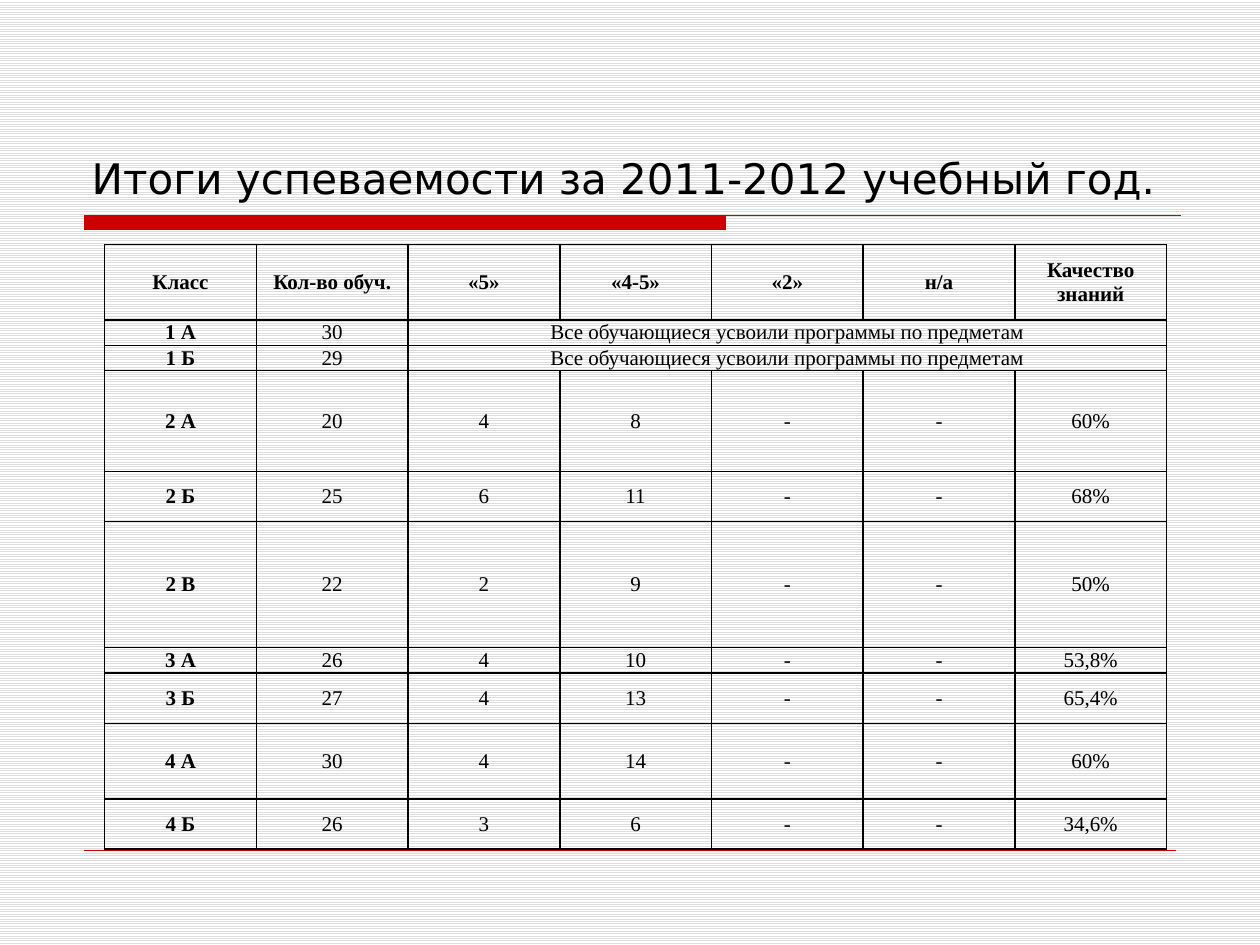
"""Build a slide with a table of school results for the 2011-2012 year."""
from copy import deepcopy

from lxml import etree
from pptx import Presentation
from pptx import util as u
from pptx.dml.color import RGBColor
from pptx.enum import dml, shapes, text
from pptx.oxml.ns import qn

HEADING = "Итоги успеваемости за 2011-2012 учебный год."
COLUMNS = ["Класс", "Кол-во обуч.", "«5»", "«4-5»", "«2»", "н/а", "Качество знаний"]
PASSED = "Все обучающиеся усвоили программы по предметам"
CLASSES = [
    (1, ["1 А", "30", PASSED]),
    (1, ["1 Б", "29", PASSED]),
    (4, ["2 А", "20", "4", "8", "-", "-", "60%"]),
    (2, ["2 Б", "25", "6", "11", "-", "-", "68%"]),
    (5, ["2 В", "22", "2", "9", "-", "-", "50%"]),
    (1, ["3 А", "26", "4", "10", "-", "-", "53,8%"]),
    (2, ["3 Б", "27", "4", "13", "-", "-", "65,4%"]),
    (3, ["4 А", "30", "4", "14", "-", "-", "60%"]),
    (2, ["4 Б", "26", "3", "6", "-", "-", "34,6%"]),
]
RESULTS = [(3, COLUMNS)] + CLASSES

THEME = {
    "ink": RGBColor(0, 0, 0),
    "accent": RGBColor(0xCC, 0, 0),
    "stripe": RGBColor(0xDD, 0xDD, 0xDD),
    "paper": RGBColor(0xFF, 0xFF, 0xFF),
    "heading": ("DejaVu Sans", u.Pt(24)),
    "body": ("Times New Roman", u.Pt(12)),
    "border": u.Pt(1),
    "rule": u.Pt(0.75),
    "footer": u.Pt(0.25),
}
LEFT, RULE_TOP, RULE_WIDTH = u.Cm(1.7), u.Cm(4.34), u.Cm(22.1)
BAR_WIDTH, BAR_HEIGHT = u.Cm(12.93), u.Cm(0.3)
TABLE_BOX = u.Cm(2.11), u.Cm(4.93), u.Cm(21.41), u.Cm(12.19)


def style(paragraph, role, bold=False):
    font = paragraph.font
    font.name, font.size = THEME[role]
    font.bold = bold
    font.color.rgb = THEME["ink"]


def paint_background(slide):
    fill = slide.background.fill
    fill.patterned()
    fill.pattern = dml.MSO_PATTERN.LIGHT_HORIZONTAL
    fill.fore_color.rgb = THEME["stripe"]
    fill.back_color.rgb = THEME["paper"]


def add_heading(slide):
    heading = slide.shapes.add_textbox(u.Cm(1.6), u.Cm(0.84), u.Cm(22.23), u.Cm(3.38))
    frame = heading.text_frame
    frame.word_wrap = True
    frame.vertical_anchor = text.MSO_ANCHOR.BOTTOM
    frame.text = HEADING
    style(frame.paragraphs[0], "heading")


def add_rule(slide):
    bar_right, bar_bottom = LEFT + BAR_WIDTH, RULE_TOP + BAR_HEIGHT
    builder = slide.shapes.build_freeform(LEFT, RULE_TOP)
    builder.add_line_segments(
        [(bar_right, RULE_TOP), (bar_right, bar_bottom), (LEFT, bar_bottom)], close=True
    )
    builder.move_to(LEFT, RULE_TOP)
    builder.add_line_segments([(LEFT + RULE_WIDTH, RULE_TOP)], close=False)
    rule = builder.convert_to_shape()
    rule.shadow.inherit = False
    rule.fill.solid()
    rule.fill.fore_color.rgb = THEME["accent"]
    rule.line.color.rgb = THEME["accent"]
    rule.line.width = THEME["rule"]

    bar = next(rule.element.iter(qn("a:path")))
    hairline = deepcopy(bar)
    split = bar.index(bar.find(qn("a:close"))) + 1
    del bar[split:]
    del hairline[:split]
    bar.set("stroke", "0")
    bar.addnext(hairline)


def add_footer(slide):
    y = u.Cm(17.15)
    footer = slide.shapes.add_connector(
        shapes.MSO_CONNECTOR.STRAIGHT, LEFT, y, u.Cm(23.7), y
    )
    footer.line.color.rgb = THEME["accent"]
    footer.line.width = THEME["footer"]
    etree.SubElement(footer.element.spPr, qn("a:effectLst"))


def add_borders(cell):
    properties = cell._tc.get_or_add_tcPr()
    for position, side in enumerate(("lnL", "lnR", "lnT", "lnB")):
        border = etree.Element(qn(f"a:{side}"), w=str(THEME["border"]))
        solid = etree.SubElement(border, qn("a:solidFill"))
        etree.SubElement(solid, qn("a:srgbClr"), val=str(THEME["ink"]))
        properties.insert(position, border)


def format_cell(cell, bold):
    cell.fill.background()
    cell.margin_left = cell.margin_right = u.Cm(0.08)
    cell.margin_top = cell.margin_bottom = 0
    cell.vertical_anchor = text.MSO_ANCHOR.MIDDLE
    add_borders(cell)
    paragraph = cell.text_frame.paragraphs[0]
    paragraph.alignment = text.PP_ALIGN.CENTER
    style(paragraph, "body", bold)


def add_results(slide):
    width, height = TABLE_BOX[2:]
    results = slide.shapes.add_table(len(RESULTS), len(COLUMNS), *TABLE_BOX).table
    results.first_row = results.horz_banding = False
    for column in results.columns:
        column.width = width // len(COLUMNS)
    unit = height // sum(lines for lines, _ in RESULTS)
    for r, (lines, values) in enumerate(RESULTS):
        results.rows[r].height = unit * lines
        for c, value in enumerate(values):
            results.cell(r, c).text = value
        for c in range(len(COLUMNS)):
            format_cell(results.cell(r, c), bold=r == 0 or c == 0)
        if len(values) < len(COLUMNS):
            results.cell(r, len(values) - 1).merge(results.cell(r, len(COLUMNS) - 1))


def main():
    deck = Presentation()
    deck.slide_width, deck.slide_height = u.Cm(25.4), u.Cm(19.05)
    slide = deck.slides.add_slide(deck.slide_layouts[6])
    paint_background(slide)
    add_rule(slide)
    add_footer(slide)
    add_heading(slide)
    add_results(slide)
    deck.save("out.pptx")


if __name__ == "__main__":
    main()
